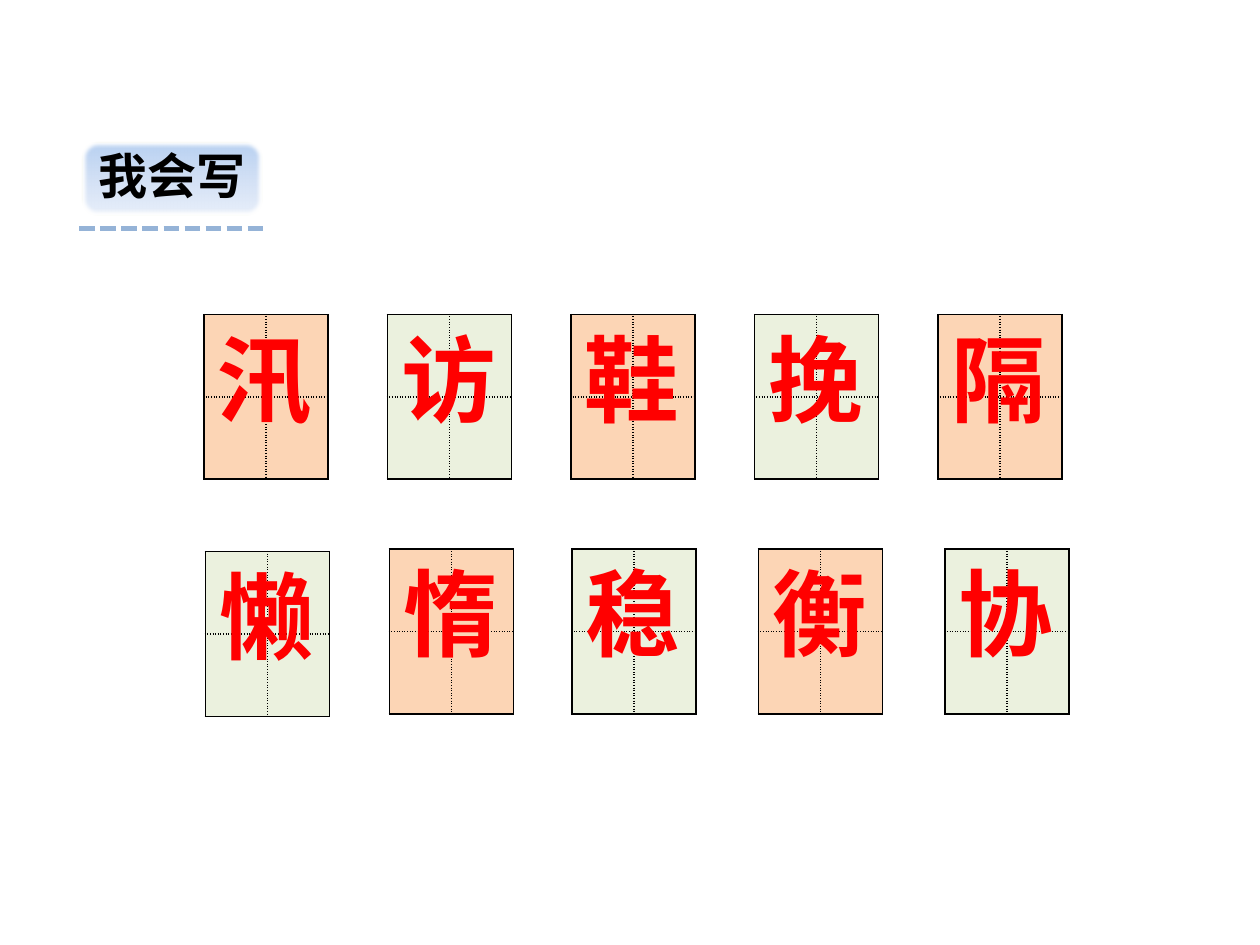
"""Build a slide of ten Chinese characters to practise, each on a writing grid."""
from copy import deepcopy
from dataclasses import dataclass

from pptx import Presentation
from pptx.dml.color import RGBColor
from pptx.enum.dml import MSO_LINE
from pptx.enum.shapes import MSO_CONNECTOR, MSO_SHAPE
from pptx.enum.text import MSO_ANCHOR, MSO_AUTO_SIZE, PP_ALIGN
from pptx.oxml.ns import qn
from pptx.oxml.xmlchemy import OxmlElement
from pptx.shapes.group import GroupShape
from pptx.slide import Slide
from pptx.table import _Cell
from pptx.text.text import TextFrame
from pptx.util import Cm, Pt

ROUND_RECT = MSO_SHAPE.ROUNDED_RECTANGLE
STRAIGHT = MSO_CONNECTOR.STRAIGHT
SYS_DASH = MSO_LINE.SQUARE_DOT
MIDDLE = MSO_ANCHOR.MIDDLE
GROW = MSO_AUTO_SIZE.SHAPE_TO_FIT_TEXT
CENTER = PP_ALIGN.CENTER
LEFT = PP_ALIGN.LEFT

FONT = "Noto Sans CJK SC"
BLACK = RGBColor(0x00, 0x00, 0x00)
WHITE = RGBColor(0xFF, 0xFF, 0xFF)
RED = RGBColor(0xFF, 0x00, 0x00)
PEACH = RGBColor(0xFC, 0xD5, 0xB5)
PALE_GREEN = RGBColor(0xEB, 0xF1, 0xDE)
OLIVE = RGBColor(0x77, 0x93, 0x3C)
RULE_BLUE = RGBColor(0x95, 0xB3, 0xD7)
TITLE_STOPS = (
    (0, RGBColor(0xB7, 0xD0, 0xF1)),
    (0.5, RGBColor(0xD2, 0xE0, 0xF5)),
    (1, RGBColor(0xE8, 0xEF, 0xFA)),
)

CELL_WIDTH = 1.25
CELL_HEIGHT = 1.66
TEXT_WIDTH = 2.44
TEXT_HEIGHT = 2.57
FIRST_LEFT = 4.11
FIRST_TOP = 6.34
PITCH = 3.7


@dataclass(frozen=True)
class Card:
    """A character and the place of its grid in centimetres."""
    char: str
    left: float
    top: float


CARDS = [Card(char, FIRST_LEFT + i * PITCH, FIRST_TOP) for i, char in enumerate("汛访鞋挽隔")] + [
    Card("懒", 4.14, 11.12),
    Card("惰", 7.85, 11.07),
    Card("稳", 11.53, 11.07),
    Card("衡", 15.29, 11.07),
    Card("协", 19.05, 11.07),
]


def write(tf: TextFrame, text: str, size: float, color: RGBColor, align: PP_ALIGN) -> None:
    """Put one bold, unwrapped line in a text frame."""
    tf.word_wrap = False
    tf.auto_size = GROW
    p = tf.paragraphs[0]
    p.alignment = align
    p.add_run().text = text
    p.font.name = FONT
    p.font.size = Pt(size)
    p.font.bold = True
    p.font.color.rgb = color
    ea = OxmlElement("a:ea")
    ea.set("typeface", FONT)
    p.font._element.find(qn("a:latin")).addnext(ea)


def add_title(group: GroupShape) -> None:
    """Draw the soft-edged title plate and the dashed rule below it."""
    sp = group.shapes.add_shape(ROUND_RECT, Cm(1.65), Cm(2.87), Cm(3.63), Cm(1.47))
    sp.shadow.inherit = False
    sp.line.color.rgb = OLIVE
    sp.line.width = Pt(0.75)
    sp.fill.gradient()
    sp.fill.gradient_angle = 270
    stops = sp._element.spPr.find(qn("a:gradFill")).find(qn("a:gsLst"))
    stops.append(deepcopy(stops[-1]))
    for stop, (position, color) in zip(sp.fill.gradient_stops, TITLE_STOPS):
        stop.position = position
        stop.color.rgb = color
    soft_edge = OxmlElement("a:softEdge")
    soft_edge.set("rad", str(Pt(2.5)))
    sp._element.spPr.find(qn("a:effectLst")).append(soft_edge)
    tf = sp.text_frame
    tf.vertical_anchor = MIDDLE
    write(tf, "我会写", 28, BLACK, CENTER)
    tf.paragraphs[0].line_spacing = 0.9

    rule = group.shapes.add_connector(STRAIGHT, Cm(1.6), Cm(4.6), Cm(5.31), Cm(4.6))
    rule.line.color.rgb = RULE_BLUE
    rule.line.width = Pt(3)
    rule.line.dash_style = SYS_DASH
    rule._element.spPr.append(OxmlElement("a:effectLst"))


def make_line(tag: str, color: RGBColor, width: float, dash: str) -> OxmlElement:
    """Return a line element for a cell border or a text outline."""
    ln = OxmlElement(tag)
    ln.set("w", str(Pt(width)))
    fill = OxmlElement("a:solidFill")
    rgb = OxmlElement("a:srgbClr")
    rgb.set("val", str(color))
    fill.append(rgb)
    preset = OxmlElement("a:prstDash")
    preset.set("val", dash)
    ln.extend([fill, preset])
    return ln


def style_cell(cell: _Cell, row: int, col: int, color: RGBColor) -> None:
    """Fill a cell, with solid outer borders and dotted inner ones."""
    cell.fill.solid()
    cell.fill.fore_color.rgb = color
    outer = {"L": col == 0, "R": col == 1, "T": row == 0, "B": row == 1}
    for i, (side, is_outer) in enumerate(outer.items()):
        dash = "solid" if is_outer else "sysDot"
        cell._tc.get_or_add_tcPr().insert(i, make_line(f"a:ln{side}", BLACK, 1, dash))


def add_grid(s: Slide, card: Card, color: RGBColor) -> None:
    """Draw the two-by-two writing grid of a card."""
    table = s.shapes.add_table(
        2, 2, Cm(card.left), Cm(card.top), Cm(2 * CELL_WIDTH), Cm(2 * CELL_HEIGHT)
    ).table
    table.first_row = False
    table.horz_banding = False
    for row in range(2):
        for col in range(2):
            style_cell(table.cell(row, col), row, col, color)


def add_character(s: Slide, card: Card) -> None:
    """Write the outlined character of a card over its grid."""
    box = s.shapes.add_textbox(
        Cm(card.left + 0.03), Cm(card.top), Cm(TEXT_WIDTH), Cm(TEXT_HEIGHT)
    )
    write(box.text_frame, card.char, 54, RED, LEFT)
    r = box.text_frame.paragraphs[0].runs[0]
    r.font._element.insert(0, make_line("a:ln", WHITE, 0.75, "solid"))


def main() -> None:
    """Build and save the slide."""
    prs = Presentation()
    prs.slide_width = Cm(25.4)
    prs.slide_height = Cm(19.05)
    s = prs.slides.add_slide(prs.slide_layouts[6])
    add_title(s.shapes.add_group_shape())
    for i, card in enumerate(CARDS):
        add_grid(s, card, PALE_GREEN if i % 2 else PEACH)
    for card in CARDS:
        add_character(s, card)
    prs.save("out.pptx")


if __name__ == "__main__":
    main()
